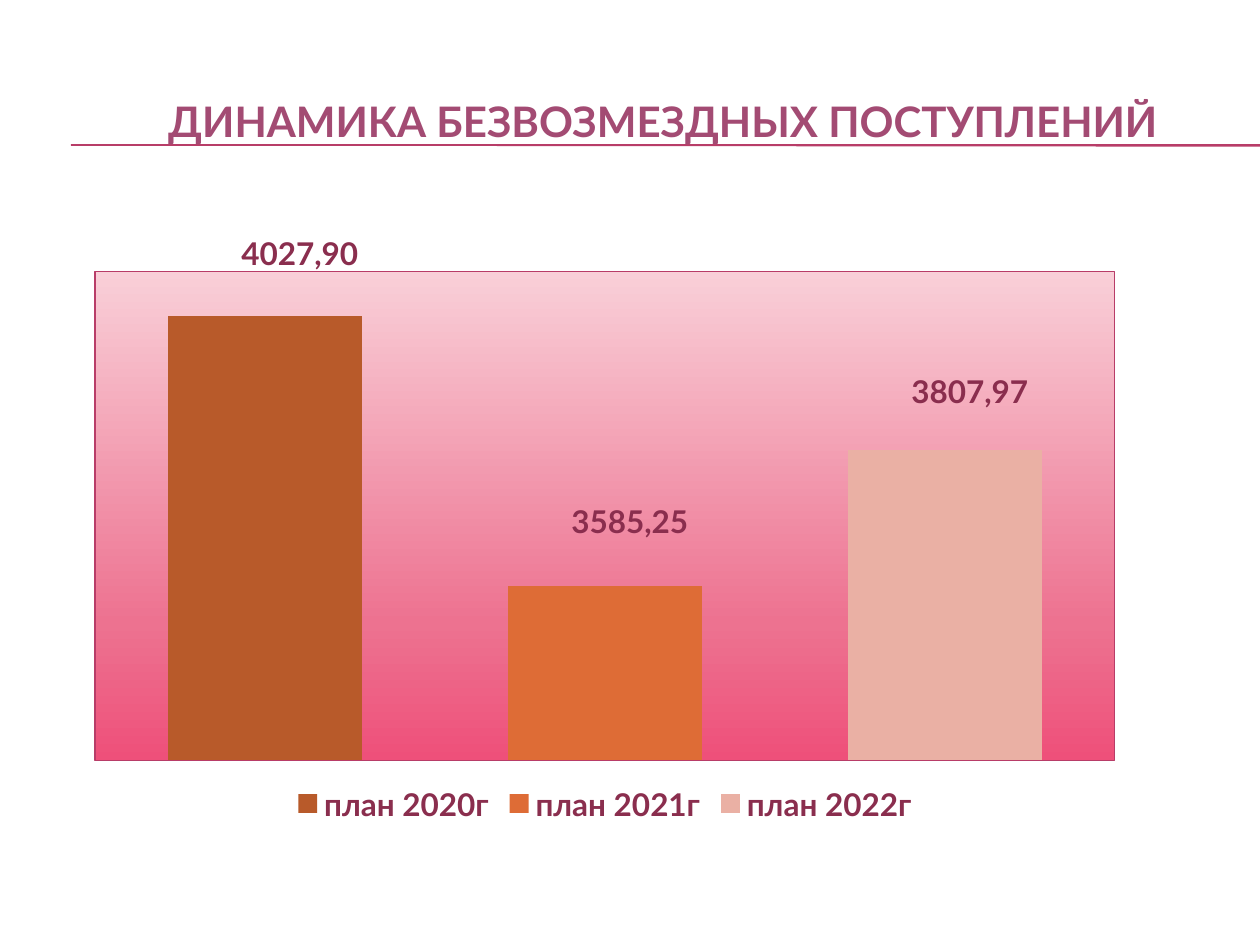
from lxml.etree import SubElement
from pptx import Presentation
from pptx.chart.data import CategoryChartData as Data
from pptx.dml.color import RGBColor as Rgb
from pptx.enum.chart import XL_CHART_TYPE as Kind, XL_LABEL_POSITION as Spot
from pptx.enum.chart import XL_LEGEND_POSITION as Side, XL_TICK_MARK as Tick
from pptx.enum.chart import XL_TICK_LABEL_POSITION as Place
from pptx.enum.shapes import MSO_CONNECTOR as Link
from pptx.enum.text import MSO_ANCHOR as Anchor, PP_ALIGN as Align
from pptx.oxml import parse_xml
from pptx.oxml.ns import nsdecls, qn
from pptx.util import Pt

PX = 914400 / 126
LEFT, TOP, WIDE, HIGH = CHART = (74, 234, 1062, 595)


class Theme:
    font = "Lato"
    title, ink, rule = "A34B73", "8A2E4E", "B83D68"
    bars = ["B85A2A", "DE6C36", "EAB0A4"]
    grad = [(0, "F9CFD8"), (72, "ED7290"), (100, "EE507A")]
    big, body, thin = Pt(24), Pt(18), Pt(0.75)


# year, value, label, label shift in px
ROWS = [
    ("план 2020г", 4027.9, "4027,90", (35, -39)),
    ("план 2021г", 3585.25, "3585,25", (25, -41)),
    ("план 2022г", 3807.97, "3807,97", (25, -35)),
]


def px(*nums):
    return [round(n * PX) for n in nums]


def put(obj, **vals):
    for key, val in vals.items():
        setattr(obj, key, val)


def style(font, size, color):
    put(font, name=Theme.font, size=size, bold=True)
    font.color.rgb = Rgb.from_string(color)


def add_rule(slide, start, end):
    line = slide.shapes.add_connector(Link.STRAIGHT, *px(71, start, 1260, end))
    line.line.width = Theme.thin
    line.line.color.rgb = Rgb.from_string(Theme.rule)
    SubElement(line._element.spPr, qn("a:effectLst"))


def add_title(slide, text):
    frame = slide.shapes.add_textbox(*px(74, 76, 1123, 89)).text_frame
    put(frame, word_wrap=True, vertical_anchor=Anchor.MIDDLE,
        margin_left=px(67)[0])
    para = frame.paragraphs[0]
    para.alignment = Align.CENTER
    run = para.add_run()
    run.text = text
    style(run.font, Theme.big, Theme.title)


def layout(x, y, extra=""):
    """Give a manual layout for px lengths inside the chart."""
    return parse_xml(
        f'<c:layout {nsdecls("c")}><c:manualLayout>{extra}'
        f'<c:x val="{x / WIDE}"/><c:y val="{y / HIGH}"/>'
        f'</c:manualLayout></c:layout>')


def set_plot(area):
    """Place the plot area and give it a gradient and a border."""
    old = area.find(qn("c:layout"))
    if old is not None:
        area.remove(old)
    modes = ('<c:layoutTarget val="inner"/>'
             '<c:xMode val="edge"/><c:yMode val="edge"/>')
    box = layout(95 - LEFT, 270 - TOP, modes)
    for tag, val in (("c:w", 1020 / WIDE), ("c:h", 490 / HIGH)):
        SubElement(box[0], qn(tag), val=str(val))
    area.insert(0, box)
    stops = "".join(
        f'<a:gs pos="{pos * 1000}"><a:srgbClr val="{hue}"/></a:gs>'
        for pos, hue in Theme.grad)
    area.append(parse_xml(
        f'<c:spPr {nsdecls("c", "a")}><a:gradFill><a:gsLst>{stops}</a:gsLst>'
        f'<a:lin ang="5400000" scaled="0"/></a:gradFill>'
        f'<a:ln w="{Theme.thin}"><a:solidFill><a:srgbClr val="{Theme.rule}"/>'
        f'</a:solidFill></a:ln></c:spPr>'))


def set_point(point, hue, text, shift):
    point.format.fill.solid()
    point.format.fill.fore_color.rgb = Rgb.from_string(hue)
    label = point.data_label
    run = label.text_frame.paragraphs[0].add_run()
    run.text = text
    style(run.font, Theme.body, Theme.ink)
    label.position = Spot.OUTSIDE_END
    label._dLbl.find(qn("c:idx")).addnext(layout(*shift))


def set_labels(labels):
    """Show values without lines from label to bar."""
    put(labels, show_value=True, number_format="0.00",
        number_format_is_linked=False)
    style(labels.font, Theme.body, Theme.ink)
    for lead in labels._element.findall(qn("c:showLeaderLines")):
        lead.set("val", "0")


def add_bars(slide):
    years, vals, texts, shifts = zip(*ROWS)
    data = Data(number_format="0.00")
    data.categories = years
    data.add_series("Series 1", vals)
    chart = slide.shapes.add_chart(
        Kind.COLUMN_CLUSTERED, *px(*CHART), data).chart
    put(chart, has_title=False, has_legend=True)
    put(chart.legend, position=Side.BOTTOM, include_in_layout=False)
    for font in (chart.font, chart.legend.font):
        style(font, Theme.body, Theme.ink)
    chart.category_axis.visible = False
    axis = chart.value_axis
    put(axis, has_major_gridlines=False, major_tick_mark=Tick.NONE,
        tick_label_position=Place.NONE, minimum_scale=3300,
        maximum_scale=4100)
    axis.format.line.fill.background()
    plot = chart.plots[0]
    put(plot, gap_width=75, vary_by_categories=True)
    bars = plot.series[0]
    for i, look in enumerate(zip(Theme.bars, texts, shifts)):
        set_point(bars.points[i], *look)
    set_labels(bars.data_labels)
    set_plot(chart._chartSpace.chart.plotArea)


def main():
    deck = Presentation()
    wide, high = px(1260, 945)
    put(deck, slide_width=wide, slide_height=high)
    slide = deck.slides.add_slide(deck.slide_layouts[6])
    for end in (145, 146):
        add_rule(slide, 145, end)
    add_title(slide, "ДИНАМИКА БЕЗВОЗМЕЗДНЫХ ПОСТУПЛЕНИЙ")
    add_bars(slide)
    deck.save("out.pptx")


if __name__ == "__main__":
    main()
